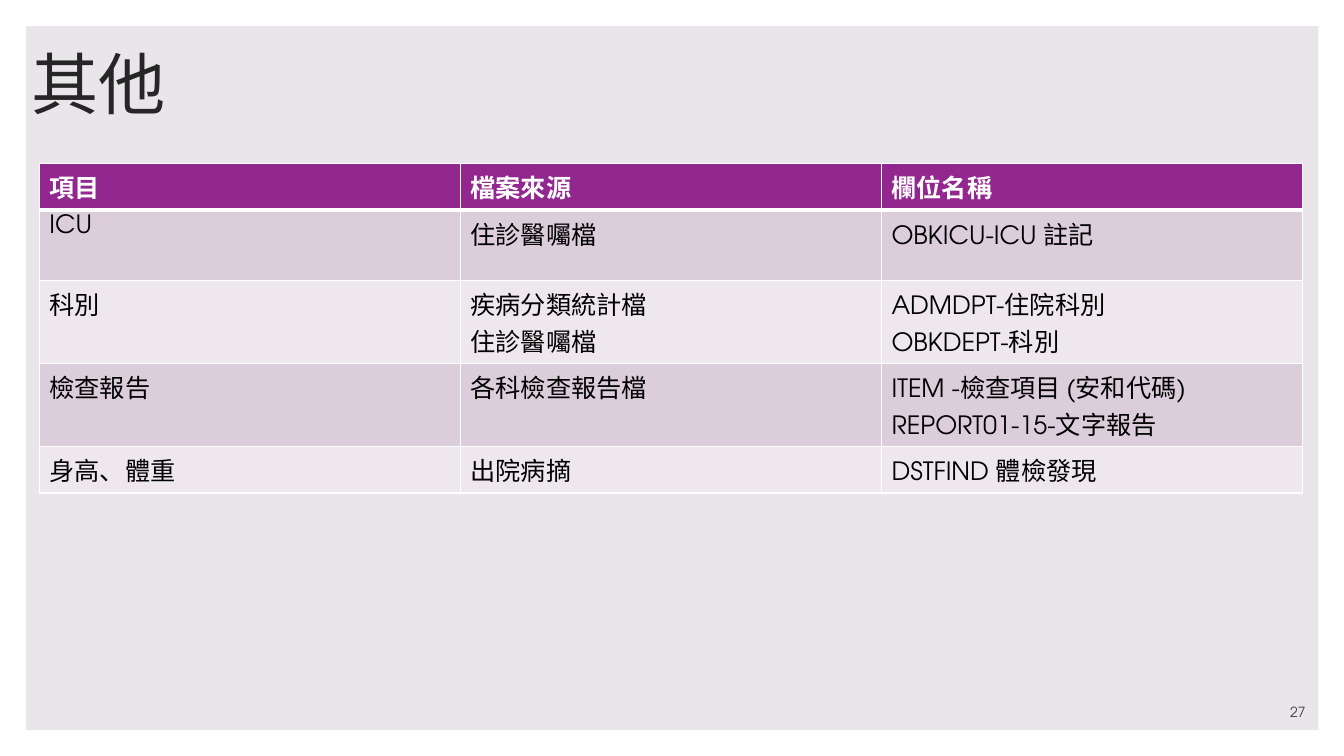
from lxml import etree
from pptx import Presentation
from pptx.dml.color import RGBColor
from pptx.enum.shapes import MSO_SHAPE as Shape
from pptx.enum.text import MSO_ANCHOR as Anchor, MSO_AUTO_SIZE as AutoSize, PP_ALIGN as Align
from pptx.oxml.ns import qn
from pptx.util import Pt

FONT = "TeX Gyre Adventor"
HEADER_FILL = "92278F"
BAND_FILLS = ("DCCDDB", "EEE8EE")
ROW_HEIGHTS = (29, 50.4, 58.4, 50.4, 29)
ROWS = (
    ("項目", "檔案來源", "欄位名稱"),
    ("ICU", "住診醫囑檔", "OBKICU-ICU 註記"),
    ("科別", "疾病分類統計檔\n住診醫囑檔", "ADMDPT-住院科別\nOBKDEPT-科別"),
    ("檢查報告", "各科檢查報告檔", "ITEM -檢查項目 (安和代碼)\nREPORT01-15-文字報告"),
    ("身高、體重", "出院病摘", "DSTFIND 體檢發現"),
)


def color(value):
    return RGBColor.from_string(value)


def place(shape, left, top, width, height):
    shape.left, shape.top = Pt(left), Pt(top)
    shape.width, shape.height = Pt(width), Pt(height)


def write(frame, text, size, hue, bold=False, align=Align.LEFT):
    frame.text = text
    for para in frame.paragraphs:
        para.alignment = align
        for span in para.runs:
            span.font.name = FONT
            span.font.size = Pt(size)
            span.font.bold = bold
            span.font.color.rgb = color(hue)


def add_panel(page):
    panel = page.shapes.add_shape(Shape.RECTANGLE, Pt(18.7), Pt(18.7), Pt(923), Pt(502.6))
    panel.shadow.inherit = False
    panel.fill.solid()
    panel.fill.fore_color.rgb = color("EAE5EB")
    panel.line.fill.background()
    # The panel lies behind the title
    page.shapes.title.element.addprevious(panel.element)


def set_title(page, text):
    title = page.shapes.title
    place(title, 15.1, 8.6, 792, 108)
    frame = title.text_frame
    frame.auto_size = AutoSize.NONE
    frame.vertical_anchor = Anchor.MIDDLE
    write(frame, text, 48, "262626")
    frame.paragraphs[0].line_spacing = 0.9


def set_borders(cell, widths):
    properties = cell._tc.get_or_add_tcPr()
    for index, (side, width) in enumerate(widths.items()):
        line = etree.Element(qn(f"a:ln{side}"), w=str(Pt(width)))
        fill = etree.SubElement(line, qn("a:solidFill"))
        etree.SubElement(fill, qn("a:srgbClr"), val="FFFFFF")
        properties.insert(index, line)


def add_grid(page):
    frame = page.shapes.add_table(len(ROWS), len(ROWS[0]), Pt(28.1), Pt(116.6),
                                  Pt(902.4), Pt(sum(ROW_HEIGHTS)))
    table = frame.table
    for column in table.columns:
        column.width = Pt(300.8)
    for index, texts in enumerate(ROWS):
        table.rows[index].height = Pt(ROW_HEIGHTS[index])
        header = index == 0
        # A thick rule parts the header from the body
        widths = {"L": 1, "R": 1, "T": 3 if index == 1 else 1, "B": 3 if header else 1}
        for cell, text in zip(table.rows[index].cells, texts):
            cell.fill.solid()
            cell.fill.fore_color.rgb = color(HEADER_FILL if header else BAND_FILLS[(index - 1) % 2])
            set_borders(cell, widths)
            write(cell.text_frame, text, 18, "FFFFFF" if header else "000000", bold=header)


def add_page_number(page, number):
    box = page.shapes.add_textbox(Pt(824.4), Pt(496.8), Pt(115.2), Pt(21.6))
    box.text_frame.word_wrap = True
    box.text_frame.vertical_anchor = Anchor.BOTTOM
    write(box.text_frame, number, 10, "404040", align=Align.RIGHT)


def main():
    deck = Presentation()
    deck.slide_width, deck.slide_height = Pt(960), Pt(540)
    page = deck.slides.add_slide(deck.slide_layouts[5])
    add_panel(page)
    set_title(page, "其他")
    add_grid(page)
    add_page_number(page, "27")
    deck.save("out.pptx")


if __name__ == "__main__":
    main()
